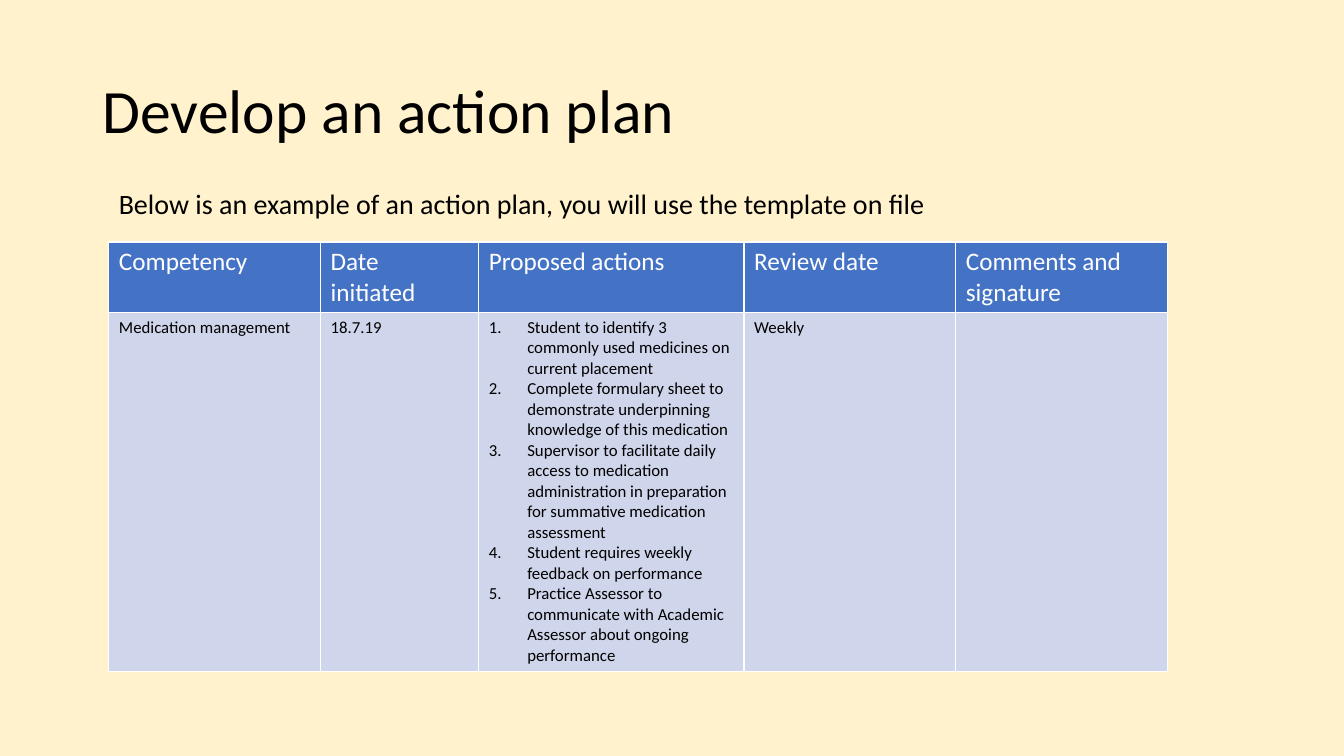
from lxml import etree
from pptx import Presentation
from pptx.dml.color import RGBColor
from pptx.enum import text
from pptx.oxml import ns
from pptx.util import Inches, Pt

BLACK, WHITE, BLUE, PALE, CREAM = "000000", "FFFFFF", "4472C4", "CFD5EA", "FFF2CC"
WIDTHS = [2.1, 1.57, 2.63, 2.1, 2.1]
HEIGHTS = [0.7, 3.56]
HEADS = ["Competency", "Date initiated", "Proposed actions", "Review date",
         "Comments and signature"]
ACTIONS = [
    "Student to identify 3 commonly used medicines on current placement",
    "Complete formulary sheet to demonstrate underpinning knowledge of this medication",
    "Supervisor to facilitate daily access to medication administration in preparation "
    "for summative medication assessment",
    "Student requires weekly feedback on performance",
    "Practice Assessor to communicate with Academic Assessor about ongoing performance",
]
PLAN = [["Medication management"], ["18.7.19"], ACTIONS, ["Weekly"], []]


def paint(fill, color):
    fill.solid()
    fill.fore_color.rgb = RGBColor.from_string(color)


def add_run(para, words, size, color):
    run = para.add_run()
    run.text = words
    font = run.font
    font.name, font.size, font.bold = "Calibri", Pt(size), False
    font.color.rgb = RGBColor.from_string(color)


def add_line(slide, box, words, size):
    """Add a one-line text box, centred vertically."""
    frame = slide.shapes.add_textbox(*map(Inches, box)).text_frame
    frame.word_wrap = True
    frame.vertical_anchor = text.MSO_ANCHOR.MIDDLE
    para = frame.paragraphs[0]
    para.line_spacing = 0.9
    add_run(para, words, size, BLACK)


def number(para):
    props = para._p.get_or_add_pPr()
    props.set("marL", str(Inches(0.38)))
    props.set("indent", str(-Inches(0.38)))
    etree.SubElement(props, ns.qn("a:buFont"), typeface="+mj-lt")
    etree.SubElement(props, ns.qn("a:buAutoNum"), type="arabicPeriod")


def edge(cell):
    """Give the cell thin white borders; call before filling it."""
    props = cell._tc.get_or_add_tcPr()
    for side in "LRTB":
        line = etree.SubElement(props, ns.qn("a:ln" + side), w=str(Pt(1)))
        fill = etree.SubElement(line, ns.qn("a:solidFill"))
        etree.SubElement(fill, ns.qn("a:srgbClr"), val=WHITE)


def fill_cell(cell, lines, size, color, back):
    edge(cell)
    paint(cell.fill, back)
    frame = cell.text_frame
    for i, words in enumerate(lines):
        para = frame.add_paragraph() if i else frame.paragraphs[0]
        if len(lines) > 1:
            number(para)
        add_run(para, words, size, color)


def add_plan(slide):
    box = map(Inches, (1.08, 2.4, sum(WIDTHS), sum(HEIGHTS)))
    table = slide.shapes.add_table(len(HEIGHTS), len(WIDTHS), *box).table
    for row, height in zip(table.rows, HEIGHTS):
        row.height = Inches(height)
    for i, width in enumerate(WIDTHS):
        table.columns[i].width = Inches(width)
        fill_cell(table.cell(0, i), [HEADS[i]], 18, WHITE, BLUE)
        fill_cell(table.cell(1, i), PLAN[i], 12, BLACK, PALE)


def main():
    deck = Presentation()
    deck.slide_width, deck.slide_height = Inches(13.33), Inches(7.5)
    slide = deck.slides.add_slide(deck.slide_layouts[6])
    paint(slide.background.fill, CREAM)
    add_line(slide, (0.92, 0.4, 11.5, 1.45), "Develop an action plan", 44)
    add_plan(slide)
    add_line(slide, (1.08, 1.68, 11.5, 0.72),
             "Below is an example of an action plan, you will use the template on file", 20)
    deck.save("out.pptx")


if __name__ == "__main__":
    main()
